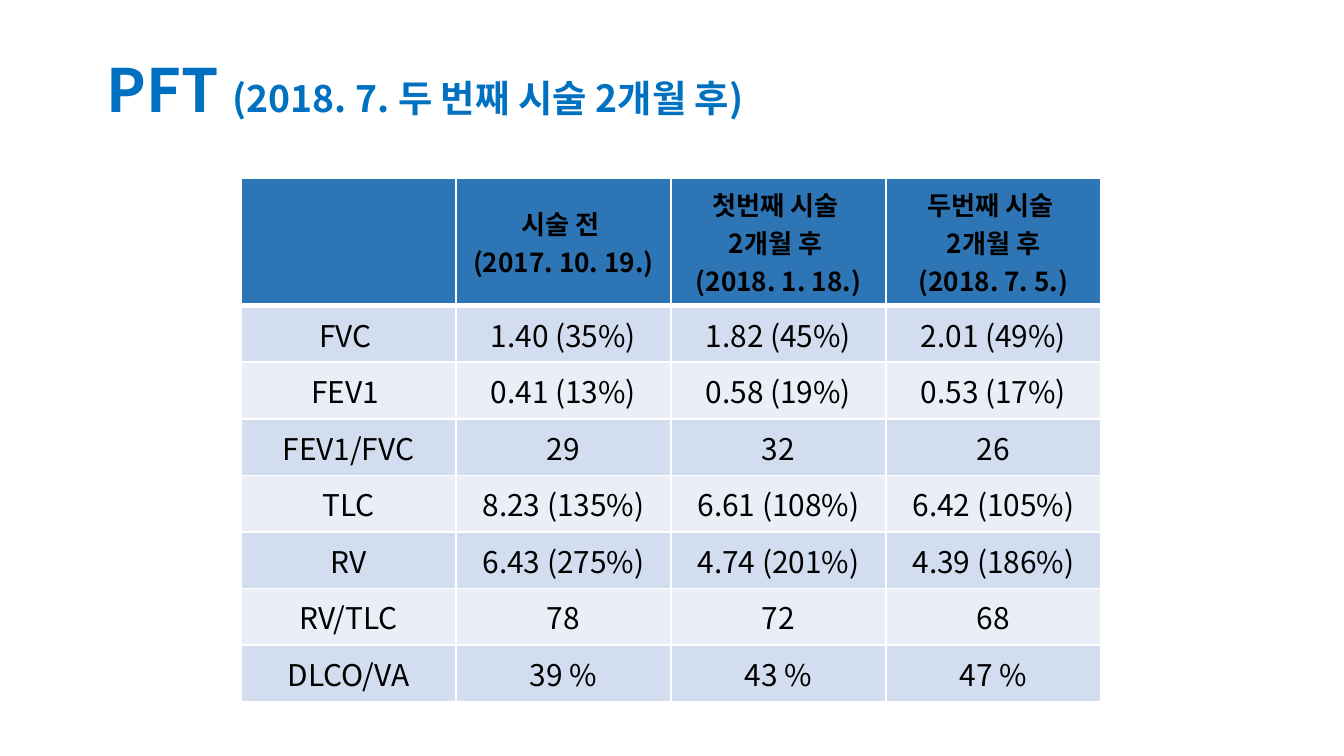
import pptx
import pptx.util
import pptx.dml.color
import pptx.enum.text
import pptx.oxml.ns
from lxml import etree

TITLE = [("PFT ", 32), ("(2018. 7. 두 번째 시술 2개월 후)", 20)]
HEAD = [
    [],
    ["시술 전 ", "(2017. 10. 19.)"],
    ["첫번째 시술 ", "2개월 후 ", "(2018. 1. 18.)"],
    ["두번째 시술 ", "2개월 후", "(2018. 7. 5.)"],
]
ROWS = [
    ("FVC ", "1.40 (35%)", "1.82 (45%)", "2.01 (49%)"),
    ("FEV1 ", "0.41 (13%)", "0.58 (19%)", "0.53 (17%)"),
    ("FEV1/FVC", "29", "32", "26"),
    ("TLC", "8.23 (135%)", "6.61 (108%)", "6.42 (105%)"),
    ("RV", "6.43 (275%)", "4.74 (201%)", "4.39 (186%)"),
    ("RV/TLC", "78", "72", "68"),
    ("DLCO/VA", "39 %", "43 %", "47 %"),
]
COLOR = {"title": "0070C0", "head": "2E75B6", "odd": "D2DEEF",
         "even": "EAEFF7", "text": "000000", "line": "FFFFFF"}
FONT = "Noto Sans CJK KR"
WIDE, HIGH = 1344, 756
LEFT, TOP, COL = 241, 178, 215
HEAD_H, ROW_H = 126, 56
PX = 9144000 / WIDE

qn = pptx.oxml.ns.qn
Pt = pptx.util.Pt
RGB = pptx.dml.color.RGBColor.from_string
ALIGN = pptx.enum.text.PP_ALIGN
MIDDLE = pptx.enum.text.MSO_ANCHOR.MIDDLE


def px(count):
    return pptx.util.Emu(round(count * PX))


def add_run(para, text, size, color, bold):
    run = para.add_run()
    run.text = text
    font = run.font
    font.size, font.bold, font.name = Pt(size), bold, FONT
    font.color.rgb = RGB(COLOR[color])
    east = etree.Element(qn("a:ea"), typeface=FONT)
    run._r.get_or_add_rPr().find(qn("a:latin")).addnext(east)


def add_lines(cell, top, bottom):
    props = cell._tc.get_or_add_tcPr()
    sides = [("L", 1), ("R", 1), ("T", top), ("B", bottom)]
    for spot, (side, width) in enumerate(sides):
        line = etree.Element(qn("a:ln" + side), w=str(Pt(width)))
        fill = etree.SubElement(line, qn("a:solidFill"))
        etree.SubElement(fill, qn("a:srgbClr"), val=COLOR["line"])
        props.insert(spot, line)


def fill_cell(cell, lines, row):
    head = row == 0
    shade = "head" if head else "odd" if row % 2 else "even"
    cell.fill.solid()
    cell.fill.fore_color.rgb = RGB(COLOR[shade])
    cell.vertical_anchor = MIDDLE
    add_lines(cell, 3 if row == 1 else 1, 3 if head else 1)
    frame = cell.text_frame
    for index, text in enumerate(lines):
        para = frame.add_paragraph() if index else frame.paragraphs[0]
        para.alignment = ALIGN.CENTER
        add_run(para, text, 14 if head else 16, "text", head)


def main():
    deck = pptx.Presentation()
    deck.slide_width, deck.slide_height = px(WIDE), px(HIGH)
    slide = deck.slides.add_slide(deck.slide_layouts[5])

    title = slide.shapes.title
    title.left, title.top, title.width, title.height = map(px, (93, 40, 1158, 106))
    title.text_frame.vertical_anchor = MIDDLE
    para = title.text_frame.paragraphs[0]
    para.alignment, para.line_spacing = ALIGN.LEFT, 0.9
    for text, size in TITLE:
        add_run(para, text, size, "title", True)

    grid = [HEAD] + [[[text] for text in row] for row in ROWS]
    count = len(HEAD)
    table = slide.shapes.add_table(
        len(grid), count, px(LEFT), px(TOP),
        px(COL * count), px(HEAD_H + ROW_H * len(ROWS))).table
    for col in table.columns:
        col.width = px(COL)
    for row, cells in enumerate(grid):
        table.rows[row].height = px(ROW_H if row else HEAD_H)
        for col, lines in enumerate(cells):
            fill_cell(table.cell(row, col), lines, row)

    deck.save("out.pptx")


if __name__ == "__main__":
    main()
